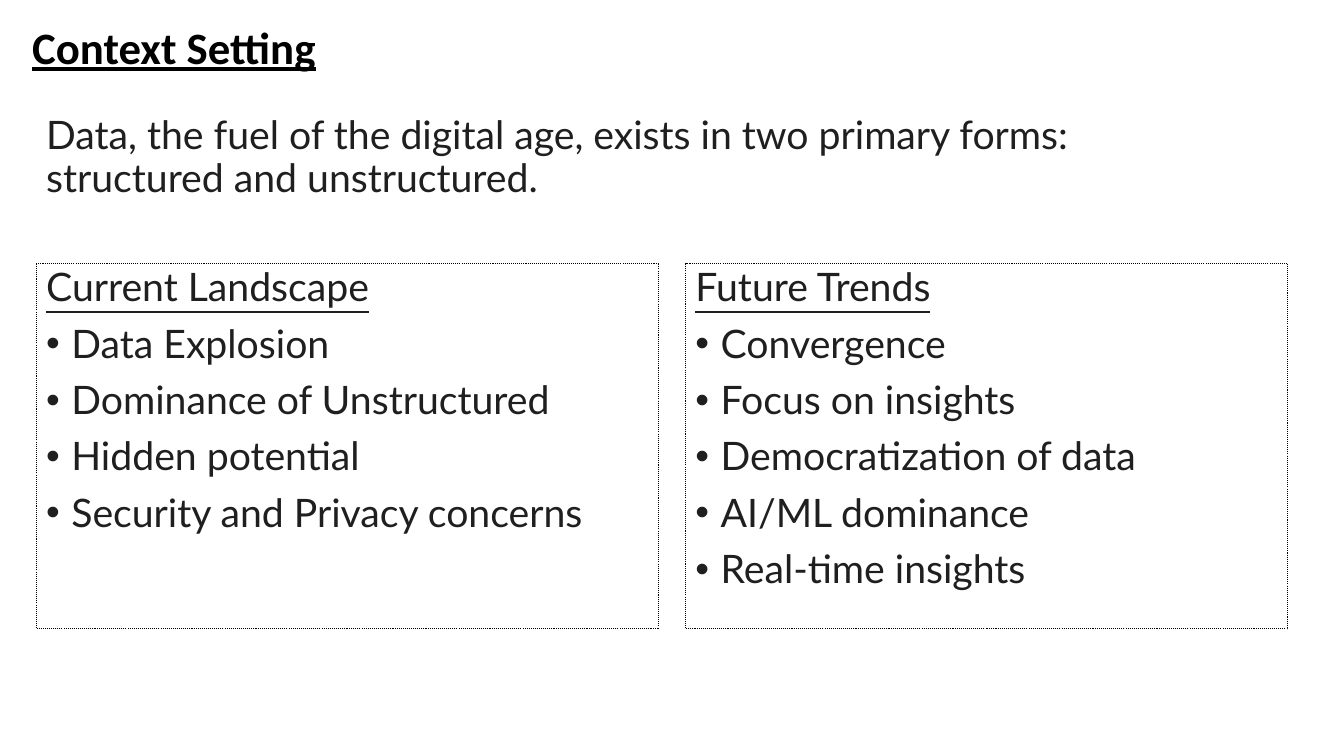
from dataclasses import dataclass

from lxml.etree import SubElement
from pptx import Presentation
from pptx.dml.color import RGBColor
from pptx.enum.dml import MSO_LINE_DASH_STYLE as Dash
from pptx.enum.shapes import MSO_SHAPE as Shape
from pptx.enum.text import MSO_ANCHOR as Anchor, PP_ALIGN as Align
from pptx.oxml.ns import qn
from pptx.util import Inches, Pt


@dataclass(frozen=True)
class Theme:
    """Fonts, colours and type sizes of the deck."""
    title_font: str = "Calibri"
    body_font: str = "Lato"
    black: RGBColor = RGBColor(0, 0, 0)
    ink: RGBColor = RGBColor(0x1F, 0x1F, 0x1F)
    title_size: int = 32
    body_size: int = 28
    gap: int = 10
    leading: float = 0.9
    border: float = 0.75


def add_text(frame, text, font, size, color, bold=False, underline=False,
             bullet=False, leading=1.0, gap=0):
    """Add one formatted paragraph, filling the empty first one if present."""
    first = not frame.text
    para = frame.paragraphs[0] if first else frame.add_paragraph()
    para.alignment = Align.LEFT
    para.line_spacing = leading
    para.space_before = Pt(0 if first else gap)
    if bullet:
        props = para._p.get_or_add_pPr()
        props.set("marL", str(Inches(0.25)))
        props.set("indent", str(Inches(-0.25)))
        SubElement(props, qn("a:buFont")).set("typeface", "Arial")
        SubElement(props, qn("a:buChar")).set("char", "•")
    span = para.add_run()
    span.text = text
    span.font.name = font
    span.font.size = Pt(size)
    span.font.color.rgb = color
    span.font.bold = bold
    span.font.underline = underline


class SlideBuilder:
    """Places elements on a slide with a grid of 100 columns and 100 rows."""

    def __init__(self, deck, theme):
        self.theme = theme
        self.page = deck.slides.add_slide(deck.slide_layouts[6])
        self.column = deck.slide_width / 100
        self.row = deck.slide_height / 100

    def area(self, left, top, width, height):
        """Turn columns and rows into slide lengths."""
        return (round(left * self.column), round(top * self.row),
                round(width * self.column), round(height * self.row))

    def body_text(self, frame, text, **style):
        """Add a paragraph in the body style."""
        theme = self.theme
        add_text(frame, text, theme.body_font, theme.body_size, theme.ink,
                 leading=theme.leading, gap=theme.gap, **style)

    def text_box(self, *place):
        """Add a wrapping text box and return its frame."""
        frame = self.page.shapes.add_textbox(*self.area(*place)).text_frame
        frame.word_wrap = True
        return frame

    def title(self, text, *place):
        """Add the underlined slide title."""
        theme = self.theme
        frame = self.text_box(*place)
        frame.vertical_anchor = Anchor.MIDDLE
        add_text(frame, text, theme.title_font, theme.title_size, theme.black,
                 bold=True, underline=True, leading=theme.leading)

    def intro(self, text, *place):
        """Add the introductory sentence."""
        self.body_text(self.text_box(*place), text)

    def panel(self, heading, points, *place):
        """Add a dotted frame with a heading and bullet points."""
        box = self.page.shapes.add_shape(Shape.RECTANGLE, *self.area(*place))
        box.shadow.inherit = False
        box.fill.background()
        box.line.color.rgb = self.theme.black
        box.line.width = Pt(self.theme.border)
        box.line.dash_style = Dash.ROUND_DOT
        frame = box.text_frame
        frame.word_wrap = True
        frame.vertical_anchor = Anchor.TOP
        self.body_text(frame, heading, underline=True)
        for point in points:
            self.body_text(frame, point, bullet=True)


def main():
    """Build and save the slide."""
    deck = Presentation()
    deck.slide_width, deck.slide_height = Inches(13.33), Inches(7.5)
    slide = SlideBuilder(deck, Theme())
    slide.title("Context Setting", 1.65, 3.2, 86.27, 6.8)
    slide.intro("Data, the fuel of the digital age, exists in two primary forms: "
                "structured and unstructured.", 2.7, 14.67, 88.75, 16)
    panels = [
        ("Current Landscape", 2.7, 46.29,
         ["Data Explosion", "Dominance of Unstructured", "Hidden potential",
          "Security and Privacy concerns"]),
        ("Future Trends", 51.01, 44.79,
         ["Convergence", "Focus on insights", "Democratization of data",
          "AI/ML dominance", "Real-time insights"]),
    ]
    for heading, left, width, points in panels:
        slide.panel(heading, points, left, 34.8, width, 48.4)
    deck.save("out.pptx")


if __name__ == "__main__":
    main()
